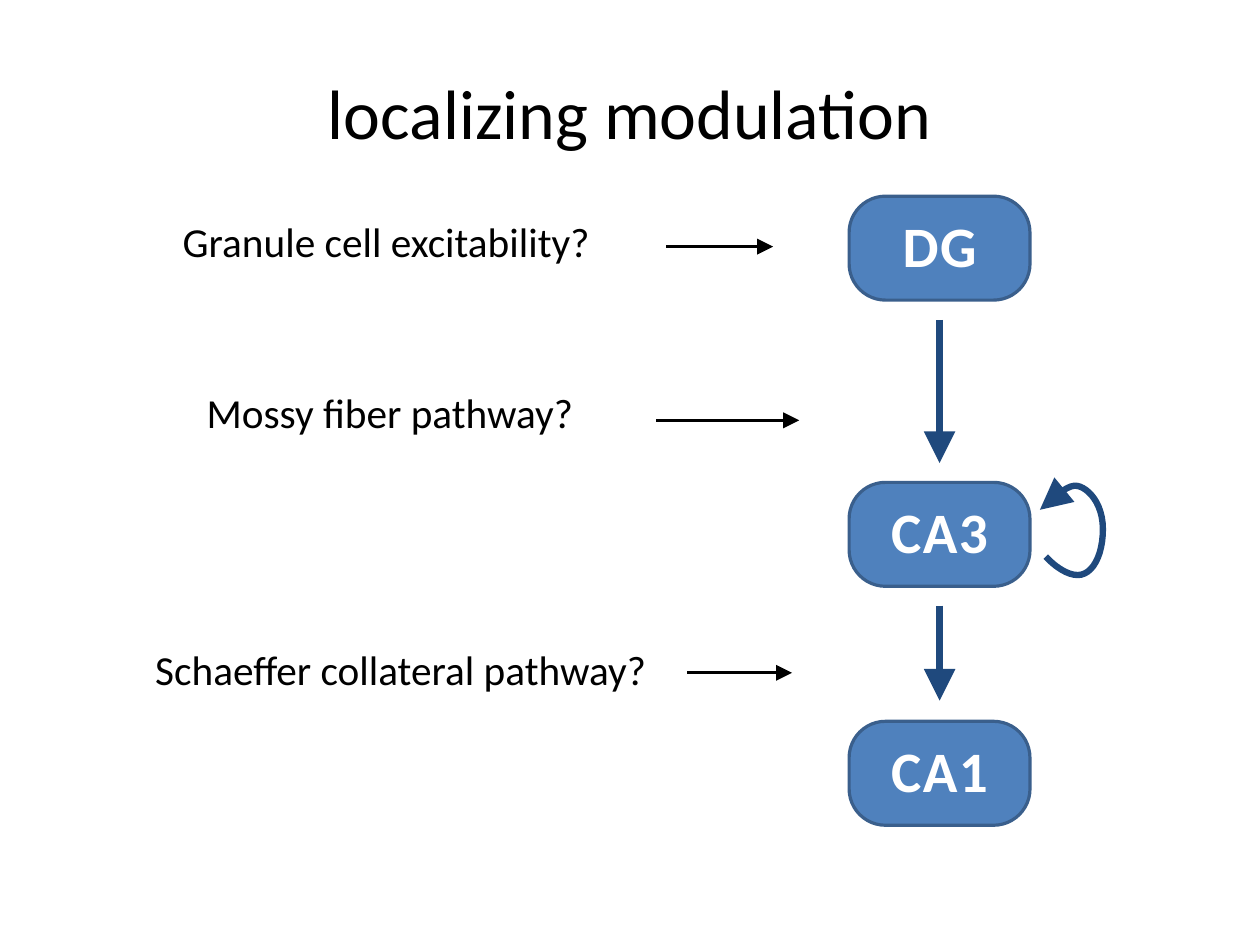
"""Build the slide on localizing modulation along DG, CA3 and CA1."""
from lxml import etree
from pptx import Presentation
from pptx.dml.color import RGBColor
from pptx.enum import shapes, text
from pptx.oxml import ns
from pptx.util import Cm, Pt

COLORS = {"ink": "000000", "region": "4F81BD", "border": "3A5F8C",
          "pathway": "1F497D", "label": "FFFFFF"}


def write(frame, words, size=26, color="ink", bold=False, spacing=0,
          align=text.PP_ALIGN.LEFT, anchor=text.MSO_ANCHOR.TOP, inset=None):
    frame.word_wrap = True
    frame.auto_size = text.MSO_AUTO_SIZE.NONE
    frame.vertical_anchor = anchor
    if inset is not None:
        frame.margin_left = frame.margin_right = inset
        frame.margin_top = frame.margin_bottom = inset
    paragraph = frame.paragraphs[0]
    paragraph.alignment = align
    paragraph.line_spacing = 0.93
    run = paragraph.add_run()
    run.text = words
    run.font.name = "Calibri"
    run.font.size = Pt(size)
    run.font.bold = bold
    run.font.color.rgb = RGBColor.from_string(COLORS[color])
    if spacing:
        run.font._element.set("spc", str(spacing))


def point_arrow(stroke, color, width):
    stroke.line.color.rgb = RGBColor.from_string(COLORS[color])
    stroke.line.width = Pt(width)
    etree.SubElement(stroke.line._get_or_add_ln(), ns.qn("a:tailEnd"),
                     type="triangle", w="lg", len="lg")
    etree.SubElement(stroke._element.spPr, ns.qn("a:effectLst"))


deck = Presentation()
deck.slide_width, deck.slide_height = Cm(28), Cm(21)
slide = deck.slides.add_slide(deck.slide_layouts[5])
centred = {"align": text.PP_ALIGN.CENTER, "anchor": text.MSO_ANCHOR.MIDDLE,
           "inset": 0}

heading = slide.shapes.title
heading.left, heading.top = Cm(1.4), Cm(0.84)
heading.width, heading.height = Cm(25.2), Cm(3.5)
write(heading.text_frame, "localizing modulation", size=44, **centred)

for question, left, top, width in [
        ("Granule cell excitability?", 3.81, 4.78, 9.83),
        ("Mossy fiber pathway?", 4.34, 8.59, 8.81),
        ("Schaeffer collateral pathway?", 3.2, 14.3, 11.91)]:
    box = slide.shapes.add_textbox(Cm(left), Cm(top), Cm(width), Cm(1.3))
    write(box.text_frame, question)

for region, top in [("DG", 4.36), ("CA3", 10.72), ("CA1", 16.03)]:
    node = slide.shapes.add_shape(shapes.MSO_SHAPE.ROUNDED_RECTANGLE,
                                  Cm(18.87), Cm(top), Cm(4.02), Cm(2.31))
    node.adjustments[0] = 0.35
    node.shadow.inherit = False
    node.fill.solid()
    node.fill.fore_color.rgb = RGBColor.from_string(COLORS["region"])
    node.line.color.rgb = RGBColor.from_string(COLORS["border"])
    node.line.width = Pt(2)
    write(node.text_frame, region, size=36, color="label", bold=True,
          spacing=100, **centred)

for x1, y1, x2, y2, color, width in [
        (14.81, 5.48, 17.18, 5.48, "ink", 2),
        (14.58, 9.34, 17.76, 9.34, "ink", 2),
        (15.27, 14.95, 17.6, 14.95, "ink", 2),
        (20.88, 7.11, 20.88, 10.29, "pathway", 4),
        (20.88, 13.46, 20.88, 15.57, "pathway", 4)]:
    arrow = slide.shapes.add_connector(shapes.MSO_CONNECTOR.STRAIGHT,
                                       Cm(x1), Cm(y1), Cm(x2), Cm(y2))
    point_arrow(arrow, color, width)

loop_controls = [(23.24, 12.37), (23.24, 12.37), (23.6, 12.78), (23.95, 12.78),
                 (24.28, 12.78), (24.51, 12.34), (24.51, 11.76),
                 (24.51, 11.18), (24.18, 10.85), (23.95, 10.8),
                 (23.7, 10.72), (23.11, 11.33), (23.11, 11.33)]
steps = 12
loop_points = []
for start in range(0, len(loop_controls) - 1, 3):
    curve = loop_controls[start:start + 4]
    for step in range(1, steps + 1):
        t = step / steps
        weights = ((1 - t) ** 3, 3 * t * (1 - t) ** 2,
                   3 * t ** 2 * (1 - t), t ** 3)
        loop_points.append(tuple(
            Cm(sum(w * point[axis] for w, point in zip(weights, curve)))
            for axis in (0, 1)))
outline = slide.shapes.build_freeform(Cm(loop_controls[0][0]),
                                      Cm(loop_controls[0][1]))
outline.add_line_segments(loop_points, close=False)
loop_arrow = outline.convert_to_shape()
loop_arrow.fill.background()
point_arrow(loop_arrow, "pathway", 4)

deck.save("out.pptx")
